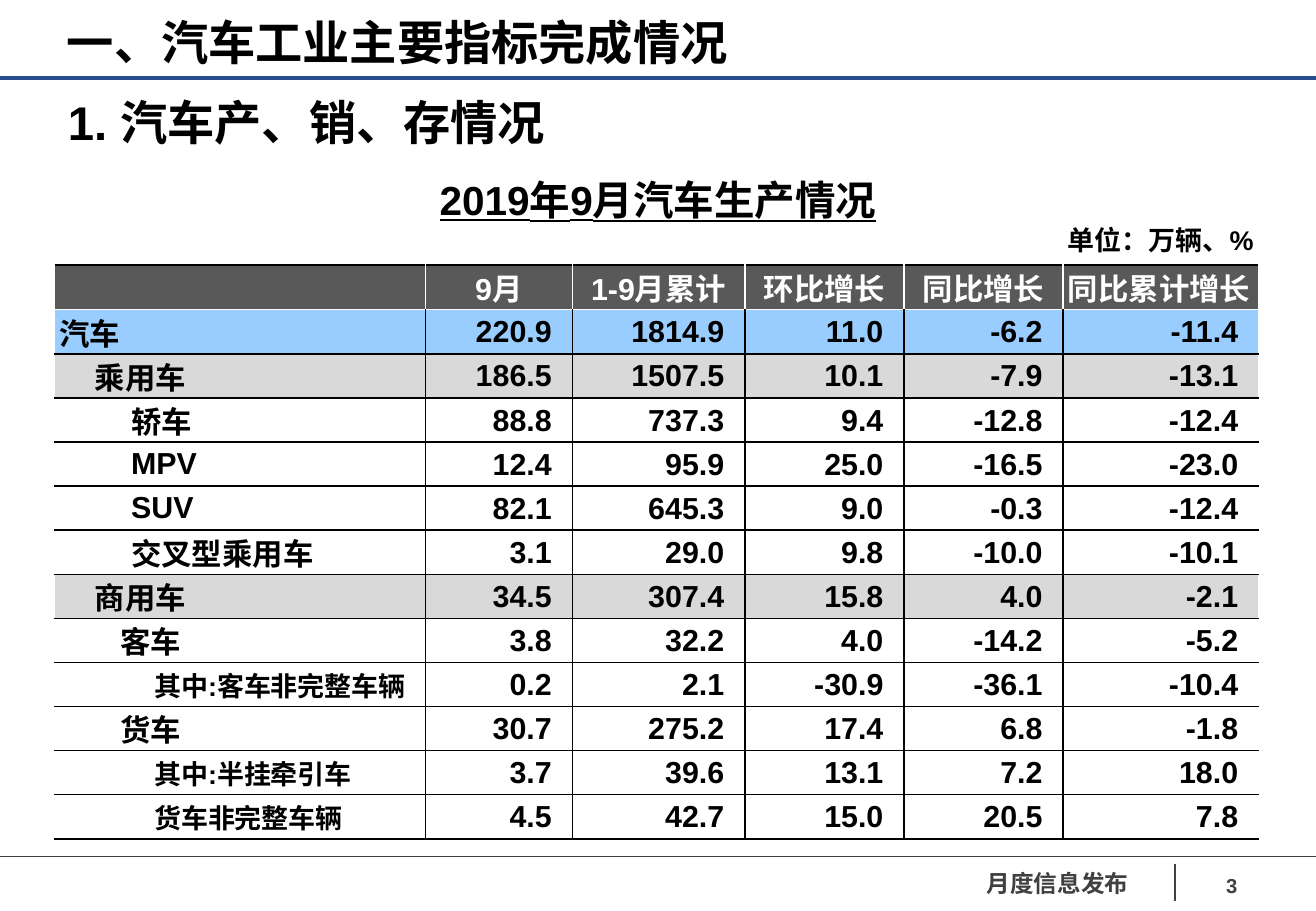
"""Monthly vehicle production slide with a bordered indicator table."""
from lxml import etree
from pptx import Presentation
from pptx.dml.color import RGBColor
from pptx.enum.shapes import MSO_CONNECTOR
from pptx.enum.text import MSO_ANCHOR, PP_ALIGN
from pptx.oxml.ns import qn
from pptx.util import Inches, Pt

LEFT, CENTER, RIGHT = PP_ALIGN.LEFT, PP_ALIGN.CENTER, PP_ALIGN.RIGHT
TOP, MIDDLE = MSO_ANCHOR.TOP, MSO_ANCHOR.MIDDLE
STRAIGHT = MSO_CONNECTOR.STRAIGHT
BLACK, WHITE, GRAY, NAVY = "000000", "FFFFFF", "404040", "294D90"
HEADER_FILL, TOTAL_FILL, GROUP_FILL = "595959", "99CCFF", "D9D9D9"
LATIN, CHINESE = "Arial", "Noto Sans CJK SC"
WIDTH, HEIGHT = 10.83, 7.5


def color(code):
    return RGBColor.from_string(code)


def write(para, text, size, code, align, latin=LATIN):
    para.text = text
    para.alignment = align
    font = para.font
    font.size, font.bold, font.name = Pt(size), True, latin
    font.color.rgb = color(code)
    defaults = para._p.pPr.find(qn("a:defRPr"))
    etree.SubElement(defaults, qn("a:ea"), typeface=CHINESE)


deck = Presentation()
deck.slide_width, deck.slide_height = Inches(WIDTH), Inches(HEIGHT)
page = deck.slides.add_slide(deck.slide_layouts[5])

rules = [
    (0, 7.05, WIDTH, 7.05, GRAY, 1),
    (9.67, 7.11, 9.67, 7.42, GRAY, 1),
    (0, 0.64, WIDTH, 0.64, NAVY, 2.5),
]
for x1, y1, x2, y2, code, weight in rules:
    rule = page.shapes.add_connector(
        STRAIGHT, Inches(x1), Inches(y1), Inches(x2), Inches(y2))
    rule.line.color.rgb = color(code)
    rule.line.width = Pt(weight)
    etree.SubElement(rule._element.spPr, qn("a:effectLst"))

title = page.shapes.title
title.left, title.top = Inches(0.45), Inches(0.06)
title.width, title.height = Inches(7.24), Inches(0.57)
title.text_frame.vertical_anchor = TOP
write(title.text_frame.paragraphs[0], "一、汽车工业主要指标完成情况",
      28, BLACK, LEFT, CHINESE)

labels = [
    ("1. 汽车产、销、存情况", 0.46, 0.72, 9.55, 0.57, 28, BLACK, LEFT, TOP, True),
    ("2019年9月汽车生产情况", 0.64, 1.39, 9.55, 0.5, 24, BLACK, CENTER, TOP, True),
    ("单位：万辆、%", 8.69, 1.79, 2.1, 0.37, 16, BLACK, LEFT, TOP, True),
    ("月度信息发布", 8.02, 7.1, 1.38, 0.34, 14, GRAY, LEFT, MIDDLE, False),
    ("3", 8.86, 7.14, 1.42, 0.3, 12, GRAY, RIGHT, TOP, True),
]
for text, left, top, width, height, size, code, align, anchor, wrap in labels:
    box = page.shapes.add_textbox(
        Inches(left), Inches(top), Inches(width), Inches(height))
    box.text_frame.word_wrap = wrap
    box.text_frame.vertical_anchor = anchor
    para = box.text_frame.paragraphs[0]
    write(para, text, size, code, align)
    para.font.underline = True if align == CENTER else None

headings = ["", "9月", "1-9月累计", "环比增长", "同比增长", "同比累计增长"]
production = [
    ("汽车", 0, 18, TOTAL_FILL, "220.9 1814.9 11.0 -6.2 -11.4"),
    ("乘用车", 0.29, 18, GROUP_FILL, "186.5 1507.5 10.1 -7.9 -13.1"),
    ("轿车", 0.59, 18, None, "88.8 737.3 9.4 -12.8 -12.4"),
    ("MPV", 0.59, 18, None, "12.4 95.9 25.0 -16.5 -23.0"),
    ("SUV", 0.59, 18, None, "82.1 645.3 9.0 -0.3 -12.4"),
    ("交叉型乘用车", 0.59, 18, None, "3.1 29.0 9.8 -10.0 -10.1"),
    ("商用车", 0.29, 18, GROUP_FILL, "34.5 307.4 15.8 4.0 -2.1"),
    ("客车", 0.5, 18, None, "3.8 32.2 4.0 -14.2 -5.2"),
    ("其中:客车非完整车辆", 0.78, 16, None, "0.2 2.1 -30.9 -36.1 -10.4"),
    ("货车", 0.5, 18, None, "30.7 275.2 17.4 6.8 -1.8"),
    ("其中:半挂牵引车", 0.78, 16, None, "3.7 39.6 13.1 7.2 18.0"),
    ("货车非完整车辆", 0.78, 16, None, "4.5 42.7 15.0 20.5 7.8"),
]
rows = [(headings, 0, 18, HEADER_FILL)]
for name, indent, size, fill, values in production:
    rows.append(([name] + values.split(), indent, size, fill))

table_height, header_height = 4.73, 0.37
table = page.shapes.add_table(
    len(rows), len(headings), Inches(0.45), Inches(2.18),
    Inches(9.91), Inches(table_height)).table
table.first_row = table.horz_banding = False
for column, width in zip(table.columns, [3.05, 1.21, 1.42, 1.31, 1.31, 1.61]):
    column.width = Inches(width)

last = len(headings) - 1
for r, (texts, indent, name_size, fill) in enumerate(rows):
    header = r == 0
    table.rows[r].height = Inches(
        header_height if header
        else (table_height - header_height) / len(production))
    for c, text in enumerate(texts):
        cell = table.cell(r, c)
        number = not header and c > 0
        cell.vertical_anchor = MIDDLE
        cell.margin_left = Inches(0.01 if number else 0.04)
        cell.margin_right = Inches(0.17 if number else 0.04)
        cell.margin_top = Inches(0.01 if number else 0)
        cell.margin_bottom = 0

        para = cell.text_frame.paragraphs[0]
        align = RIGHT if number else CENTER if header and c < last else LEFT
        write(para, text, 18 if c else name_size,
              WHITE if header else BLACK, align)
        if c == 0:
            para._p.pPr.set("marL", str(Inches(indent)))

        white_edges = {"L": header or c == 0, "R": header or c == last,
                       "T": r == 1, "B": header}
        properties = cell._tc.get_or_add_tcPr()
        for side, is_white in white_edges.items():
            edge = etree.SubElement(properties, qn("a:ln" + side), w=str(Pt(1)))
            paint = etree.SubElement(edge, qn("a:solidFill"))
            etree.SubElement(paint, qn("a:srgbClr"),
                             val=WHITE if is_white else BLACK)
        if fill:
            cell.fill.solid()
            cell.fill.fore_color.rgb = color(fill)
        else:
            cell.fill.background()

deck.save("out.pptx")
